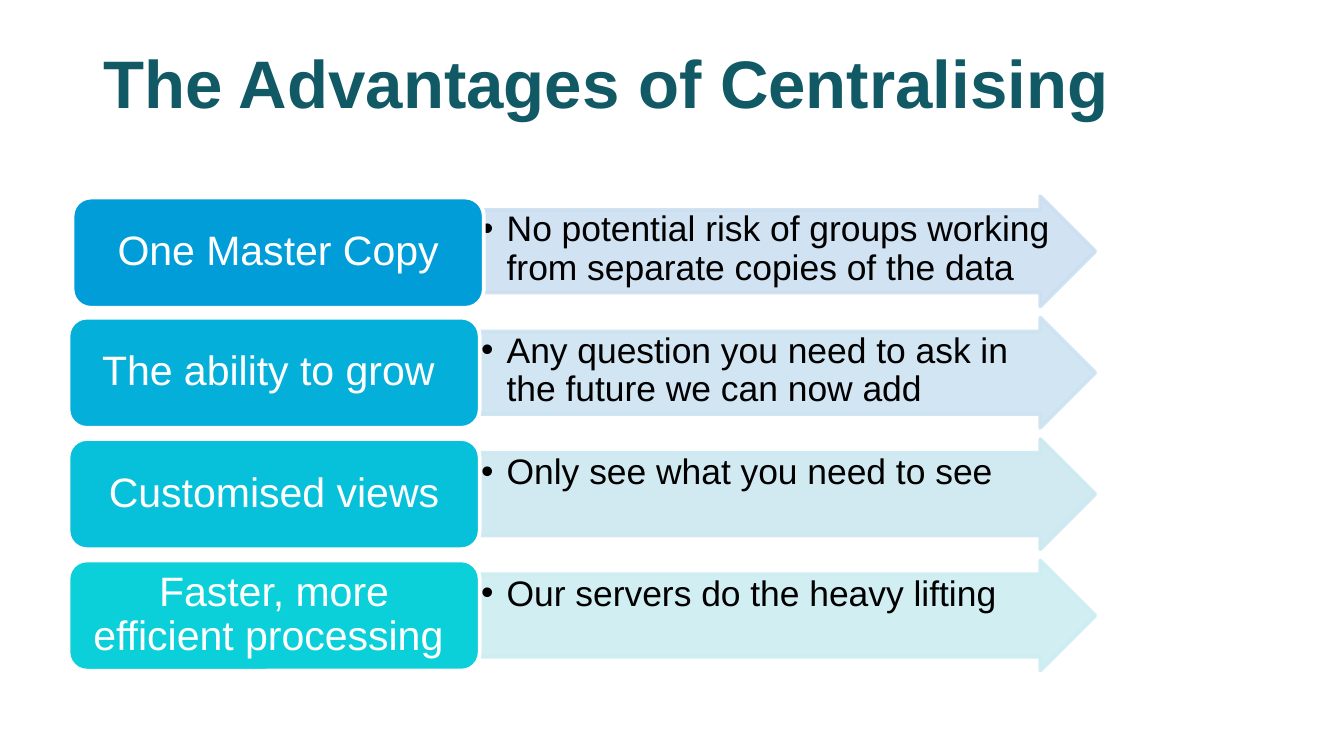
from lxml.etree import SubElement as Sub
from pptx import Presentation
from pptx.dml.color import RGBColor
from pptx.enum.shapes import MSO_SHAPE as Shape
from pptx.enum.text import MSO_ANCHOR as Anchor, PP_ALIGN as Align
from pptx.oxml.ns import qn
from pptx.util import Inches, Pt

ROWS = [
    ("One Master Copy", "009DD9", "CCDFF1",
     "No potential risk of groups working from separate copies of the data"),
    ("The ability to grow ", "04AFD9", "CCE3F1",
     "Any question you need to ask in the future we can now add"),
    ("Customised views", "07C0D9", "CCE8F1", "Only see what you need to see"),
    ("Faster, more efficient processing ", "0BD0D9", "CCEDF1",
     "Our servers do the heavy lifting"),
]


def color(code):
    return RGBColor.from_string(code)


def inset(frame, side, edge):
    frame.word_wrap = True
    frame.margin_left = frame.margin_right = Inches(side)
    frame.margin_top = frame.margin_bottom = Inches(edge)


def write(para, text, size, code, bold=False):
    run = para.add_run()
    run.text = text
    font = run.font
    font.name, font.size, font.bold = "Arial", Pt(size), bold
    font.color.rgb = color(code)


def fade(shape, share):
    for node in shape._element.spPr.iter(qn("a:srgbClr")):
        Sub(node, qn("a:alpha"), val=str(share * 1000))


def bullet(para, indent):
    props = para._p.get_or_add_pPr()
    props.set("marL", str(Inches(indent)))
    props.set("indent", str(-Inches(indent)))
    Sub(props, qn("a:buFont"), typeface="Arial")
    Sub(props, qn("a:buChar"), char="•")


def block(slide, kind, box, fill, line):
    shape = slide.shapes.add_shape(kind, *map(Inches, box))
    shape.shadow.inherit = False
    shape.fill.solid()
    shape.fill.fore_color.rgb = color(fill)
    shape.line.color.rgb = color(line)
    shape.line.width = Pt(2)
    return shape


def title(slide, box, text):
    frame = slide.shapes.add_textbox(*map(Inches, box)).text_frame
    inset(frame, 0.1, 0.05)
    frame.vertical_anchor = Anchor.MIDDLE
    write(frame.paragraphs[0], text, 36, "115964", True)


def arrow(slide, box, tint, text):
    shape = block(slide, Shape.RIGHT_ARROW, box, tint, tint)
    shape.adjustments[0], shape.adjustments[1] = 0.75, 0.5
    fade(shape, 90)
    frame = shape.text_frame
    inset(frame, 0.01, 0.01)
    frame.vertical_anchor = Anchor.TOP
    para = frame.paragraphs[0]
    para.alignment = Align.LEFT
    para.line_spacing = 0.9
    bullet(para, 0.19)
    write(para, text, 19, "000000")


def label(slide, box, fill, text):
    shape = block(slide, Shape.ROUNDED_RECTANGLE, box, fill, "FFFFFF")
    frame = shape.text_frame
    inset(frame, 0.09, 0.05)
    frame.vertical_anchor = Anchor.MIDDLE
    para = frame.paragraphs[0]
    para.alignment = Align.CENTER
    para.line_spacing = 0.9
    write(para, text, 22, "FFFFFF")


def chart(slide, box, rows):
    left, top, width, height = box
    tall, wide = 0.82, 3.06
    step = (height - tall) / (len(rows) - 1)
    for i, (name, fill, tint, text) in enumerate(rows):
        y = top + i * step
        arrow(slide, (left + wide, y, width - wide, tall), tint, text)
        right, down = (0.03, 0.01) if i == 0 else (0, 0)
        label(slide, (left + right, y + down, wide, tall), fill, name)


def main():
    deck = Presentation()
    deck.slide_width = Inches(10)
    deck.slide_height = Inches(10 * 9 / 16)
    slide = deck.slides.add_slide(deck.slide_layouts[6])
    title(slide, (0.67, 0.35, 9, 0.52), "The Advantages of Centralising")
    chart(slide, (0.51, 1.46, 7.64, 3.53), ROWS)
    deck.save("out.pptx")


if __name__ == "__main__":
    main()
